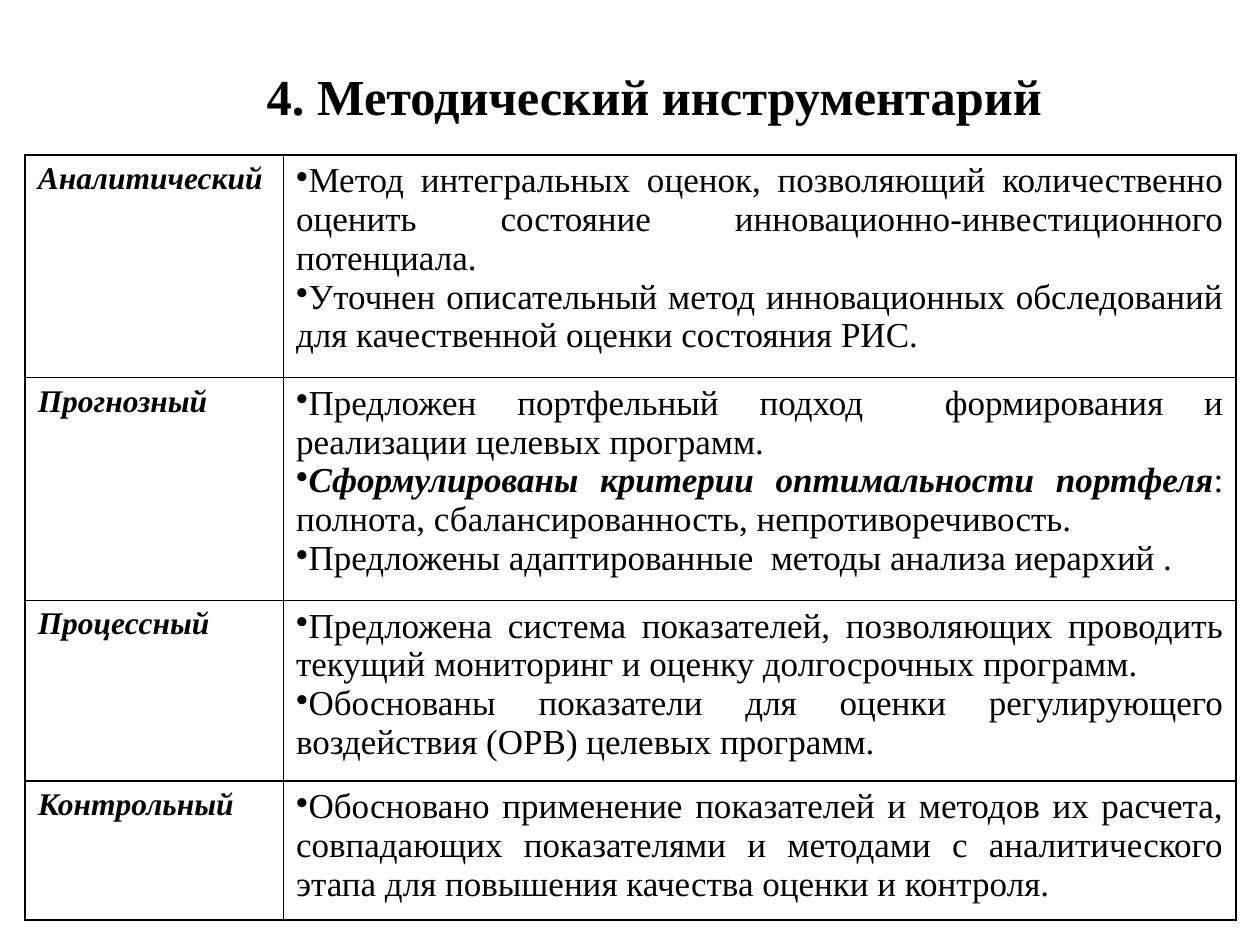
import pptx
import pptx.util
import pptx.dml.color
import pptx.enum.text
import pptx.oxml.ns
import lxml.etree

Inches, Pt = pptx.util.Inches, pptx.util.Pt
ALIGN = pptx.enum.text.PP_ALIGN
BLACK = pptx.dml.color.RGBColor(0, 0, 0)
WHITE = pptx.dml.color.RGBColor(255, 255, 255)
FACE = "Times New Roman"

COLS = [2.05, 7.56]
ROWS = [1.74, 1.74, 1.41, 1.09]

# Each row: method name, then its points; a point is (bold lead, plain text)
METHODS = [
    ("Аналитический", [
        ("", "Метод интегральных оценок, позволяющий количественно оценить "
             "состояние инновационно-инвестиционного потенциала."),
        ("", "Уточнен описательный метод инновационных обследований "
             "для качественной оценки состояния РИС."),
    ]),
    ("Прогнозный", [
        ("", "Предложен портфельный подход  формирования и реализации "
             "целевых программ."),
        ("Сформулированы критерии оптимальности портфеля",
         ": полнота, сбалансированность, непротиворечивость."),
        ("", "Предложены адаптированные  методы анализа иерархий ."),
    ]),
    ("Процессный", [
        ("", "Предложена система показателей, позволяющих проводить текущий "
             "мониторинг и оценку долгосрочных программ."),
        ("", "Обоснованы показатели для оценки регулирующего воздействия "
             "(ОРВ) целевых программ."),
    ]),
    ("Контрольный", [
        ("", "Обосновано применение показателей и методов их расчета, "
             "совпадающих показателями и методами с аналитического этапа "
             "для повышения качества оценки и контроля."),
    ]),
]


def style(font, size, bold=False, slant=False):
    font.name, font.size = FACE, Pt(size)
    font.bold, font.italic = bold, slant
    font.color.rgb = BLACK


def add_title(slide, text):
    box = slide.shapes.add_textbox(
        Inches(0.39), Inches(0.44), Inches(9.61), Inches(0.63))
    frame = box.text_frame
    frame.word_wrap = True
    frame.vertical_anchor = pptx.enum.text.MSO_ANCHOR.MIDDLE
    para = frame.paragraphs[0]
    para.text = text
    para.alignment = ALIGN.CENTER
    style(para.font, 28.8, bold=True)


def add_node(parent, tag, **attrs):
    node = lxml.etree.SubElement(parent, pptx.oxml.ns.qn(tag))
    for key, value in attrs.items():
        node.set(key, value)
    return node


def frame_cell(cell):
    """Draw black borders; they must precede the fill in the cell's XML."""
    props = cell._tc.get_or_add_tcPr()
    for side in ("L", "R", "T", "B"):
        line = add_node(props, "a:ln" + side, w=str(Pt(1)))
        fill = add_node(line, "a:solidFill")
        add_node(fill, "a:srgbClr", val=str(BLACK))
    cell.fill.solid()
    cell.fill.fore_color.rgb = WHITE


def fill_name(cell, name):
    para = cell.text_frame.paragraphs[0]
    para.text = name
    style(para.font, 18, bold=True, slant=True)


def fill_point(para, lead, text):
    para.alignment = ALIGN.JUSTIFY
    style(para.font, 20)
    props = para._p.get_or_add_pPr()
    props.set("marL", "0")
    props.set("indent", "0")
    mark = add_node(props, "a:buChar", char="•")
    props.insert(0, mark)
    if lead:
        run = para.add_run()
        run.text = lead
        style(run.font, 20, bold=True, slant=True)
    para.add_run().text = text


def fill_points(cell, points):
    frame = cell.text_frame
    for i, point in enumerate(points):
        para = frame.add_paragraph() if i else frame.paragraphs[0]
        fill_point(para, *point)


def add_grid(slide):
    table = slide.shapes.add_table(
        len(ROWS), len(COLS), Inches(0.2), Inches(1.23),
        Inches(sum(COLS)), Inches(sum(ROWS))).table
    table.first_row = table.horz_banding = False
    for col, width in zip(table.columns, COLS):
        col.width = Inches(width)
    for row, height, (name, points) in zip(table.rows, ROWS, METHODS):
        row.height = Inches(height)
        for cell in row.cells:
            frame_cell(cell)
        fill_name(row.cells[0], name)
        fill_points(row.cells[1], points)


def main():
    deck = pptx.Presentation()
    deck.slide_width, deck.slide_height = Inches(10), Inches(7.5)
    slide = deck.slides.add_slide(deck.slide_layouts[6])
    add_title(slide, "4. Методический инструментарий")
    add_grid(slide)
    deck.save("out.pptx")


if __name__ == "__main__":
    main()
